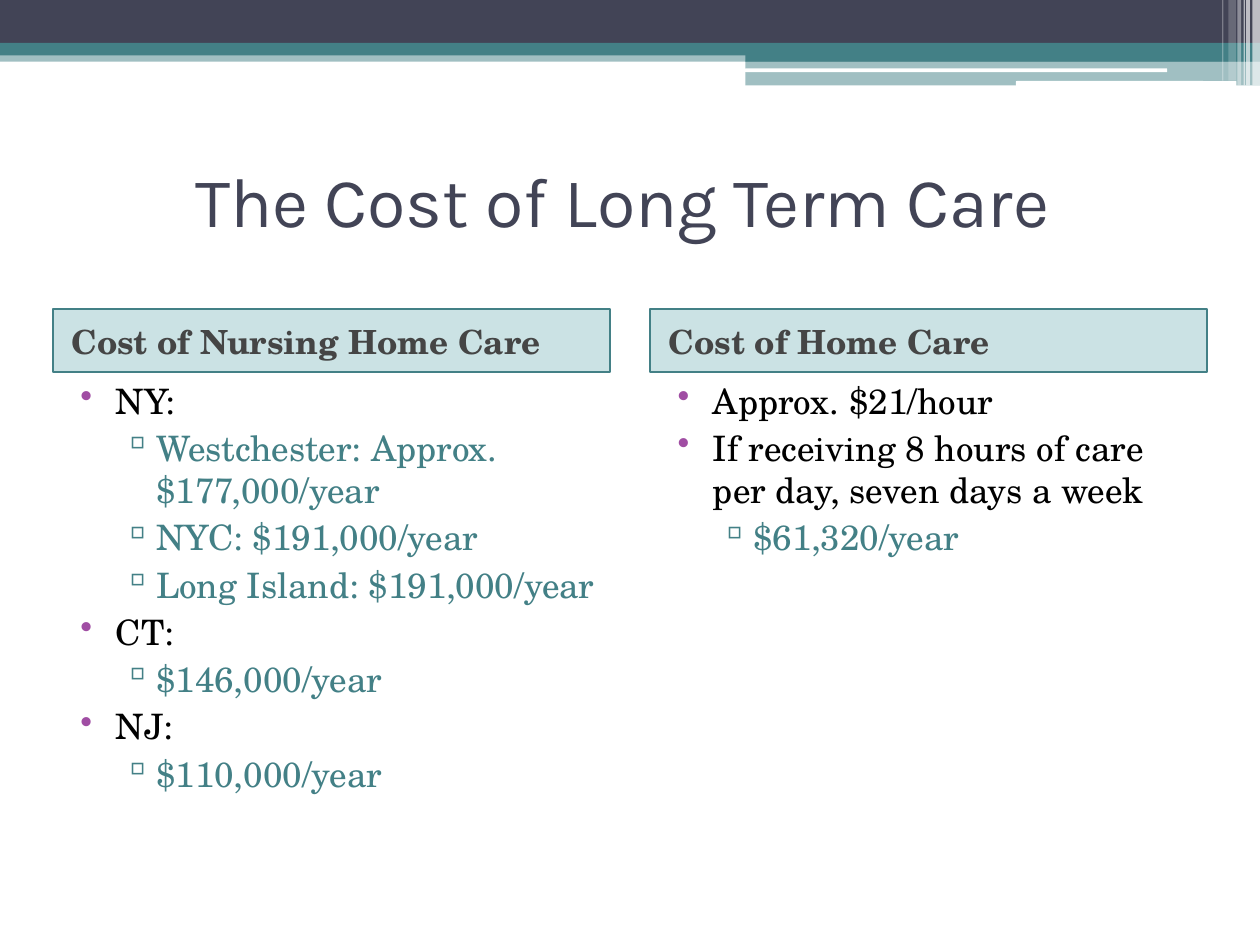
from lxml import etree
from pptx import Presentation
from pptx.dml.color import RGBColor
from pptx.enum import shapes, text
from pptx.oxml.ns import qn
from pptx.util import Pt

NAVY, TEAL, WHITE = "424456", "438086", "FFFFFF"
HEADING, SANS, SERIF = "454545", "Karla", "TeX Gyre Schola"
RECT = shapes.MSO_SHAPE.RECTANGLE
ROUND = shapes.MSO_SHAPE.ROUNDED_RECTANGLE
LEVELS = [(28.8, -20.16, "•", "A04DA3", "000000"),
          (51.84, -19.44, "▫", TEAL, TEAL)]


def rgb(color):
    return RGBColor.from_string(color)


class Deck:
    def __init__(self, s):
        self.s = s

    def shape(self, x, y, w, h, fill, alpha=100, line=None, kind=RECT):
        sp = self.s.shapes.add_shape(kind, Pt(x), Pt(y), Pt(w), Pt(h))
        sp.shadow.inherit = False
        sp.fill.solid()
        sp.fill.fore_color.rgb = rgb(fill)
        if alpha < 100:
            clr = sp._element.spPr.find(qn("a:solidFill"))[0]
            etree.SubElement(clr, qn("a:alpha")).set("val", str(alpha * 1000))
        if line:
            sp.line.color.rgb = rgb(line)
            sp.line.width = Pt(1)
        else:
            sp.line.fill.background()
        return sp

    def font(self, p, size, name, color, bold=False):
        for r in p.runs:
            r.font.size = Pt(size)
            r.font.name = name
            r.font.bold = bold
            r.font.color.rgb = rgb(color)

    def textbox(self, x, y, w, h):
        tf = self.s.shapes.add_textbox(Pt(x), Pt(y), Pt(w), Pt(h)).text_frame
        tf.word_wrap = True
        return tf

    def title(self, x, y, w, h, words):
        tf = self.textbox(x, y, w, h)
        tf.vertical_anchor = text.MSO_ANCHOR.MIDDLE
        p = tf.paragraphs[0]
        p.text = words
        p.alignment = text.PP_ALIGN.CENTER
        self.font(p, 40, SANS, NAVY)

    def heading(self, x, y, w, h, words):
        tf = self.shape(x, y, w, h, "328E97", 25, TEAL).text_frame
        tf.word_wrap = True
        tf.vertical_anchor = text.MSO_ANCHOR.MIDDLE
        p = tf.paragraphs[0]
        p.text = words
        p.alignment = text.PP_ALIGN.LEFT
        p._p.get_or_add_pPr().set("marL", str(Pt(3.6)))
        self.font(p, 19, SERIF, HEADING, True)

    def bullets(self, x, y, w, h, items):
        tf = self.textbox(x, y, w, h)
        for i, (level, words) in enumerate(items):
            p = tf.paragraphs[0] if i == 0 else tf.add_paragraph()
            margin, indent, char, bullet, color = LEVELS[level]
            p.text = words
            p.level = level
            if i:
                p.space_before = Pt(3)
            pr = p._p.get_or_add_pPr()
            pr.set("marL", str(Pt(margin)))
            pr.set("indent", str(Pt(indent)))
            clr = etree.SubElement(pr, qn("a:buClr"))
            etree.SubElement(clr, qn("a:srgbClr")).set("val", bullet)
            etree.SubElement(pr, qn("a:buChar")).set("char", char)
            self.font(p, 20, SERIF, color)


def main():
    prs = Presentation()
    prs.slide_width, prs.slide_height = Pt(720), Pt(540)
    deck = Deck(prs.slides.add_slide(prs.slide_layouts[6]))

    bands = [(0, 28.8, 720, 6.48, TEAL, 50), (0, 0, 720, 24.48, NAVY, 100),
             (0, 24.48, 720, 7.2, TEAL, 100),
             (426, 28.08, 294, 7.2, TEAL, 100),
             (426, 34.7, 294, 14.1, TEAL, 50)]
    for x, y, w, h, fill, alpha in bands:
        deck.shape(x, y, w, h, fill, alpha)
    for x, y, w, h in [(425.8, 39.1, 241.2, 2.16), (580.5, 46.3, 126, 2.8)]:
        deck.shape(x, y, w, h, WHITE, kind=ROUND)
    stripes = [(715.68, 4.32, 48.8, 65), (712.08, 2.16, 48.8, 65),
               (710.64, 0.72, 48.8, 60), (707.04, 2.16, 48.8, 40),
               (702, 4.32, 46.1, 20), (698.4, 0.72, 46.1, 30)]
    for x, w, h, alpha in stripes:
        deck.shape(x, 0, w, h, WHITE, alpha)

    deck.title(30.24, 72, 660, 84.24, "The Cost of Long Term Care ")
    columns = [
        (30.24, "Cost of Nursing Home Care", [
            (0, "NY:"), (1, "Westchester: Approx. $177,000/year"),
            (1, "NYC: $191,000/year"), (1, "Long Island: $191,000/year"),
            (0, "CT:"), (1, "$146,000/year"),
            (0, "NJ:"), (1, "$110,000/year")]),
        (371.52, "Cost of Home Care", [
            (0, "Approx. $21/hour"),
            (0, "If receiving 8 hours of care per day, seven days a week"),
            (1, "$61,320/year")])]
    for x, heading, items in columns:
        deck.heading(x, 176.76, 318.24, 36, heading)
        deck.bullets(x, 213.12, 318.24, 306, items)
    prs.save("out.pptx")


if __name__ == "__main__":
    main()
